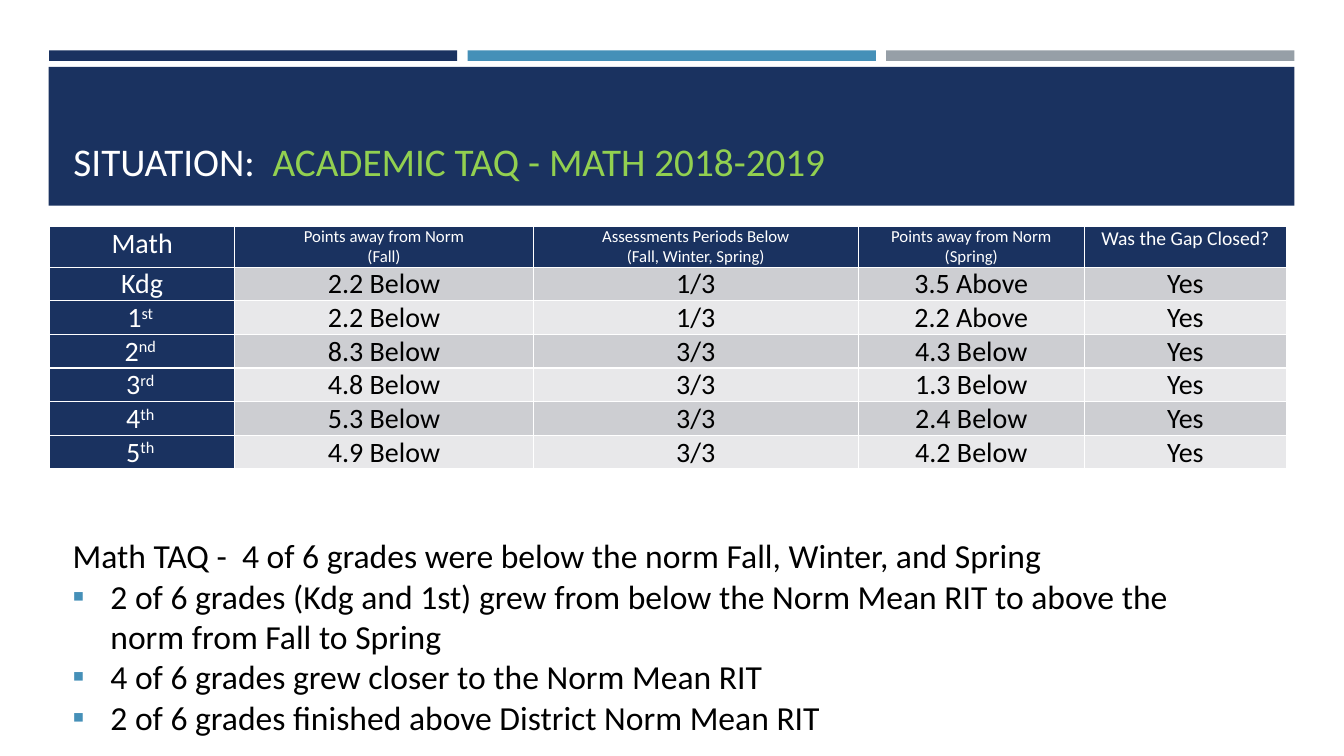
import pptx
import pptx.dml.color
import pptx.enum.shapes
import pptx.enum.text
import pptx.oxml
import pptx.oxml.ns
import pptx.util

Pt = pptx.util.Pt
NAVY, BLUE, GRAY, GREEN = "1A3260", "4590B8", "969FA7", "92D050"
WHITE, BLACK = "FFFFFF", "000000"
BANDS = ["CDCED2", "E8E8EA"]


def color(hex_string):
    return pptx.dml.color.RGBColor.from_string(hex_string)


def style(paragraph, size, hex_string):
    """Set the font that all runs of the paragraph share."""
    paragraph.font.name = "Calibri"
    paragraph.font.size = Pt(size)
    paragraph.font.bold = False
    paragraph.font.color.rgb = color(hex_string)


presentation = pptx.Presentation()
presentation.slide_width = Pt(960)
presentation.slide_height = Pt(540)
slide = presentation.slides.add_slide(presentation.slide_layouts[6])

# Three accent bars above the title band
bars = [(35 + 299 * index, 36, 291.6, 7.5, fill)
        for index, fill in enumerate([NAVY, BLUE, GRAY])]
title_band = (34.8, 47.8, 889.7, 99.2, NAVY)
for left, top, width, height, fill in bars + [title_band]:
    shape = slide.shapes.add_shape(
        pptx.enum.shapes.MSO_SHAPE.RECTANGLE, Pt(left), Pt(top), Pt(width), Pt(height))
    shape.shadow.inherit = False
    shape.fill.solid()
    shape.fill.fore_color.rgb = color(fill)
    shape.line.fill.background()

# Title
title = slide.shapes.add_textbox(Pt(45.4), Pt(57.6), Pt(868), Pt(77.8)).text_frame
title.word_wrap = True
title.vertical_anchor = pptx.enum.text.MSO_ANCHOR.BOTTOM
paragraph = title.paragraphs[0]
style(paragraph, 28, WHITE)
paragraph.add_run().text = "SITUATION:  "
topic = paragraph.add_run()
topic.text = "ACADEMIC TAQ - MATH 2018-2019"
topic.font.color.rgb = color(GREEN)

# Table of grades; the grade's ordinal ending is set as superscript
headers = [("Math", 20), ("Points away from Norm\n(Fall)", 12),
           ("Assessments Periods Below\n(Fall, Winter, Spring)", 12),
           ("Points away from Norm\n(Spring)", 12), ("Was the Gap Closed?", 14)]
grades = [
    ("Kdg", "", "2.2 Below", "1/3", "3.5 Above"),
    ("1", "st", "2.2 Below", "1/3", "2.2 Above"),
    ("2", "nd", "8.3 Below", "3/3", "4.3 Below"),
    ("3", "rd", "4.8 Below", "3/3", "1.3 Below"),
    ("4", "th", "5.3 Below", "3/3", "2.4 Below"),
    ("5", "th", "4.9 Below", "3/3", "4.2 Below"),
]
column_widths = [132.5, 213.1, 232.3, 161.3, 144.6]
header_height, row_height = 29, 24
table = slide.shapes.add_table(
    len(grades) + 1, len(headers), Pt(35.3), Pt(161.8), Pt(sum(column_widths)),
    Pt(header_height + row_height * len(grades))).table
table.first_col = True
for column, width in zip(table.columns, column_widths):
    column.width = Pt(width)

rows = [headers]
for name, ending, *results in grades:
    rows.append([(text, 20) for text in [name, *results, "Yes"]])
for row_index, row in enumerate(rows):
    table.rows[row_index].height = Pt(row_height if row_index else header_height)
    for column_index, (text, size) in enumerate(row):
        is_heading = row_index == 0 or column_index == 0
        cell = table.cell(row_index, column_index)
        cell.fill.solid()
        cell.fill.fore_color.rgb = color(NAVY if is_heading else BANDS[(row_index - 1) % 2])
        cell.margin_left = cell.margin_right = Pt(5)
        cell.margin_top = cell.margin_bottom = 0
        cell.text = text
        for paragraph in cell.text_frame.paragraphs:
            paragraph.alignment = pptx.enum.text.PP_ALIGN.CENTER
            style(paragraph, size, WHITE if is_heading else BLACK)

for row_index, (name, ending, *results) in enumerate(grades, start=1):
    if ending:
        run = table.cell(row_index, 0).text_frame.paragraphs[0].add_run()
        run.text = ending + " "
        run._r.get_or_add_rPr().set("baseline", "30000")

# Findings: an opening line and its bullets
findings = [
    "Math TAQ -  4 of 6 grades were below the norm Fall, Winter, and Spring",
    "2 of 6 grades (Kdg and 1st) grew from below the Norm Mean RIT to above the "
    "norm from Fall to Spring",
    "4 of 6 grades grew closer to the Norm Mean RIT",
    "2 of 6 grades finished above District Norm Mean RIT",
]
summary = slide.shapes.add_textbox(Pt(44.8), Pt(378.7), Pt(852.5), Pt(174)).text_frame
summary.word_wrap = True
summary.text = "\n".join(findings)
for paragraph in summary.paragraphs:
    style(paragraph, 24, BLACK)
for paragraph in summary.paragraphs[1:]:
    properties = paragraph._p.get_or_add_pPr()
    properties.set("marL", str(Pt(27)))
    properties.set("indent", str(Pt(-27)))
    bullet = pptx.oxml.parse_xml(
        f'<a:pPr {pptx.oxml.ns.nsdecls("a")}><a:buClr><a:srgbClr val="{BLUE}"/></a:buClr>'
        '<a:buFont typeface="Calibri"/><a:buChar char="▪"/></a:pPr>')
    for position, element in enumerate(list(bullet)):
        properties.insert(position, element)

presentation.save("out.pptx")
